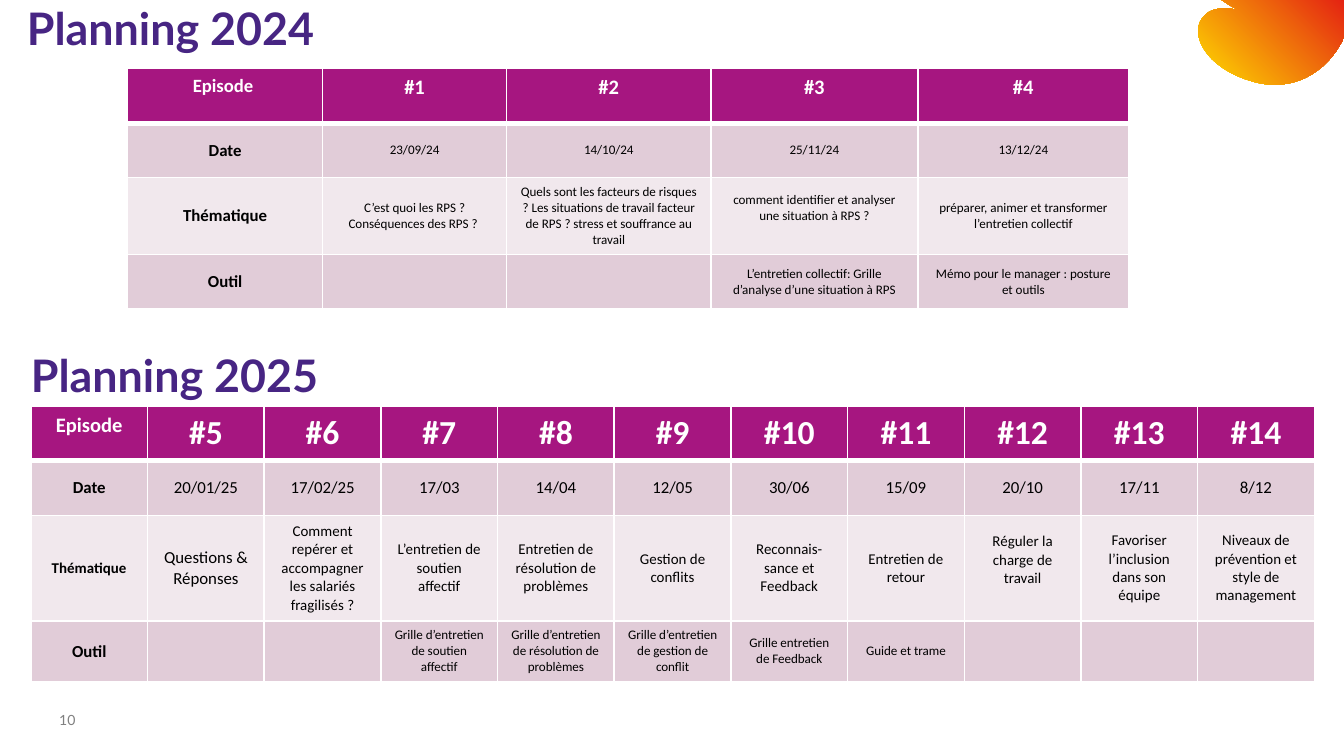
import pptx
import pptx.dml.color
import pptx.enum.text
import pptx.oxml
import pptx.oxml.ns
import pptx.util

Inches = pptx.util.Inches
Pt = pptx.util.Pt
RGBColor = pptx.dml.color.RGBColor
Align = pptx.enum.text.PP_ALIGN
Anchor = pptx.enum.text.MSO_ANCHOR

PURPLE = RGBColor(0x47, 0x25, 0x83)
MAGENTA = RGBColor(0xA6, 0x16, 0x80)
PINK = RGBColor(0xE1, 0xCC, 0xD8)
PALE = RGBColor(0xF1, 0xE8, 0xED)
WHITE = RGBColor(0xFF, 0xFF, 0xFF)
BLACK = RGBColor(0, 0, 0)
GRAY = RGBColor(0x80, 0x80, 0x80)
YELLOW = RGBColor(0xFF, 0xDD, 0x00)
RED = RGBColor(0xE4, 0x23, 0x12)

deck = pptx.Presentation()
deck.slide_width = Inches(10)
deck.slide_height = Inches(10 * 9 / 16)
slide = deck.slides.add_slide(deck.slide_layouts[5])
shapes = slide.shapes


def write(frame, text, font, size, color, bold, align):
    """Put one formatted run in the first paragraph of a text frame."""
    para = frame.paragraphs[0]
    para.alignment = align
    run = para.add_run()
    run.text = text
    run.font.name = font
    run.font.size = Pt(size)
    run.font.bold = bold
    run.font.color.rgb = color
    return para


def border(cell, side, width):
    """Add a white line on one side (L, R, T or B) of a cell."""
    line = pptx.oxml.parse_xml(
        f'<a:ln{side} {pptx.oxml.ns.nsdecls("a")} w="{Pt(width)}">'
        f'<a:solidFill><a:srgbClr val="{WHITE}"/></a:solidFill></a:ln{side}>')
    cell._tc.get_or_add_tcPr().append(line)


# Corner petal: straight edges, then Bezier curves sampled in steps
start = (9.99, 0.3)
curves = [
    ((9.87, 0.54), (9.62, 0.69), (9.33, 0.61)),
    ((8.96, 0.51), (8.83, 0.23), (8.97, 0.11)),
    ((9.02, 0.06), (9.11, 0.05), (9.24, 0.08)),
    ((9.21, 0.07), (9.18, 0.06), (9.15, 0.04)),
]
points = [(10, 0), (10, 0.26), start]
steps = 16
for one, two, end in curves:
    for step in range(1, steps + 1):
        t = step / steps
        u = 1 - t
        points.append(tuple(
            u**3 * a + 3 * u * u * t * b + 3 * u * t * t * c + t**3 * d
            for a, b, c, d in zip(start, one, two, end)))
    start = end
build = shapes.build_freeform(Inches(9.09), 0)
build.add_line_segments([(Inches(x), Inches(y)) for x, y in points])
petal = build.convert_to_shape()
petal.shadow.inherit = False
petal.line.fill.background()
petal.fill.gradient()
petal.fill.gradient_angle = 45
for stop, color, place in zip(petal.fill.gradient_stops, (YELLOW, RED), (0, 1)):
    stop.color.rgb = color
    stop.position = place

# Headings and page number
title = shapes.title
title.left, title.top = Inches(0.23), Inches(2.61)
title.width, title.height = Inches(9.12), Inches(0.43)
first = shapes.add_textbox(Inches(0.2), Inches(0.03), Inches(9.12), Inches(0.43))
number = shapes.add_textbox(Inches(0.44), Inches(5.32), Inches(0.59), Inches(0.1))
for box, text, size, color, bold, anchor in [
    (title, "Planning 2025", 24, PURPLE, True, Anchor.MIDDLE),
    (first, "Planning 2024", 24, PURPLE, True, Anchor.MIDDLE),
    (number, "10", 7.5, GRAY, False, Anchor.BOTTOM),
]:
    frame = box.text_frame
    frame.word_wrap = True
    frame.auto_size = pptx.enum.text.MSO_AUTO_SIZE.NONE
    frame.vertical_anchor = anchor
    frame.margin_left = frame.margin_right = 0
    frame.margin_top = frame.margin_bottom = 0
    para = write(frame, text, "Lato", size, color, bold, Align.LEFT)
    if bold:
        para.line_spacing = 0.8

# Each row: label, label size, text size, texts
rows24 = [
    ("Episode ", 10, 11, ["#1", "#2", "#3", "#4"]),
    ("Date", 9, 7, ["23/09/24", "14/10/24", "25/11/24", "13/12/24"]),
    ("Thématique", 9, 7, [
        "C’est quoi les RPS ? Conséquences des RPS ? ",
        "Quels sont les facteurs de risques ? Les situations de travail "
        "facteur de RPS ? stress et souffrance au travail",
        "comment identifier et analyser une situation à RPS ?",
        "préparer, animer et transformer l’entretien collectif"]),
    ("Outil", 9, 7, [
        "", "",
        "L’entretien collectif: Grille d’analyse d’une situation à RPS",
        "Mémo pour le manager : posture et outils"]),
]
rows25 = [
    ("Episode", 11, 18, [f"#{n}" for n in range(5, 15)]),
    ("Date", 9, 9, ["20/01/25", "17/02/25", "17/03", "14/04", "12/05",
                    "30/06", "15/09", "20/10", "17/11", "8/12"]),
    ("Thématique", 8, 8, [
        "Questions & Réponses",
        "Comment repérer et accompagner les salariés fragilisés ?",
        "L’entretien de soutien affectif",
        "Entretien de résolution de problèmes",
        "Gestion de conflits",
        "Reconnais-sance et Feedback",
        "Entretien de retour",
        "Réguler la charge de travail",
        "Favoriser l’inclusion dans son équipe",
        "Niveaux de prévention et style de management"]),
    ("Outil", 9, 7, [
        "", "",
        "Grille d’entretien de soutien affectif",
        "Grille d’entretien de résolution de problèmes",
        "Grille d’entretien de gestion de conflit",
        "Grille entretien de Feedback",
        "Guide et trame", "", "", ""]),
]
fills = [MAGENTA, PINK, PALE, PINK]
raised = ("comment identifier", "Réguler")

for left, top, widths, heights, rows in [
    (0.23, 3.02, [9.55 / 11] * 11, [0.4, 0.41, 0.78, 0.45], rows25),
    (0.95, 0.51, [1.45, 1.37, 1.52, 1.54, 1.57], [0.41, 0.4, 0.57, 0.4], rows24),
]:
    table = shapes.add_table(
        len(rows), len(widths), Inches(left), Inches(top),
        Inches(sum(widths)), Inches(sum(heights))).table
    for col, width in zip(table.columns, widths):
        col.width = Inches(width)
    for r, (label, big, small, texts) in enumerate(rows):
        table.rows[r].height = Inches(heights[r])
        head = r == 0
        for c, text in enumerate([label] + texts):
            cell = table.cell(r, c)
            for side in "LRTB":
                thick = (head and side == "B") or (r == 1 and side == "T")
                border(cell, side, 3 if thick else 1)
            cell.fill.solid()
            cell.fill.fore_color.rgb = fills[r]
            cell.vertical_anchor = Anchor.TOP if head else Anchor.MIDDLE
            if text.startswith(raised):
                cell.margin_bottom = Inches(0.17)
            if text:
                size = big if c == 0 else small
                if text.startswith("Questions"):
                    size = 9
                write(cell.text_frame, text, "Calibri", size,
                      WHITE if head else BLACK, head or c == 0, Align.CENTER)

deck.save("out.pptx")
